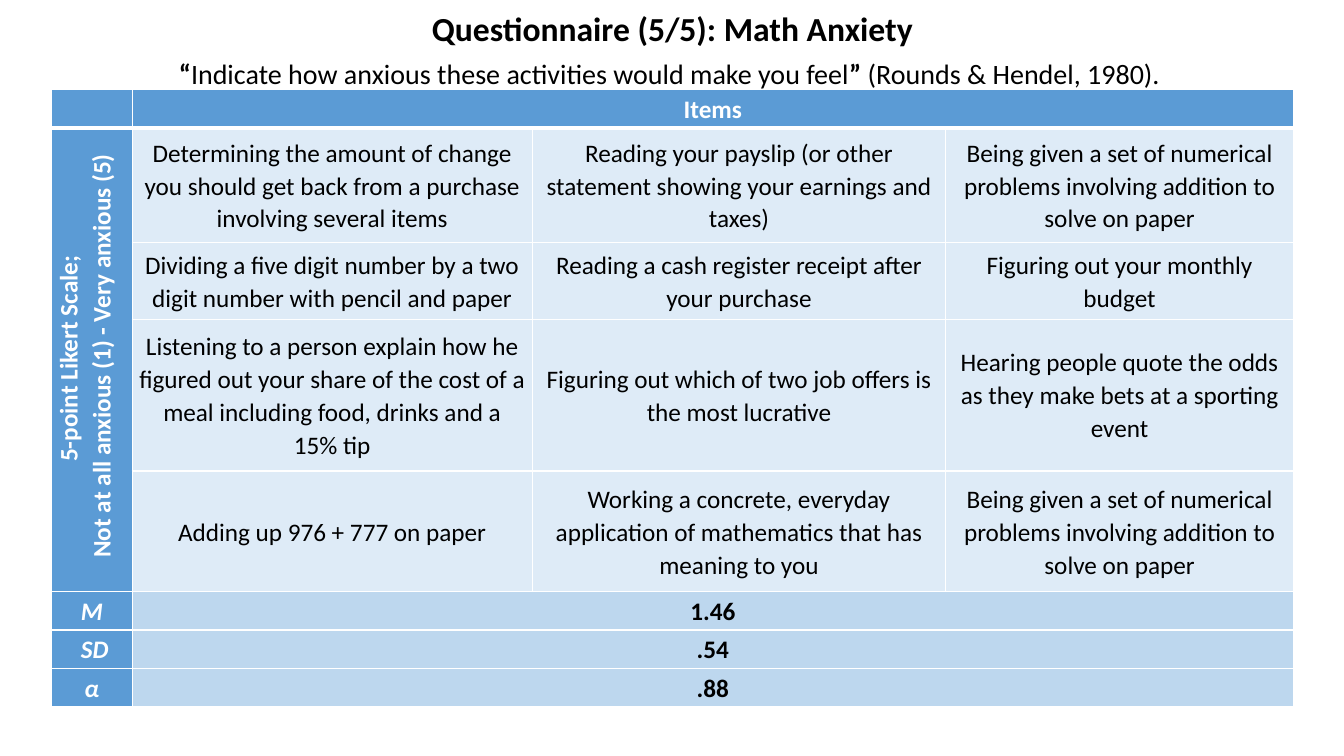
from lxml import etree
from pptx import Presentation
from pptx.dml.color import RGBColor
from pptx.enum.text import MSO_ANCHOR, PP_ALIGN
from pptx.oxml.ns import qn
from pptx.util import Inches, Pt

MIDDLE, TOP = MSO_ANCHOR.MIDDLE, MSO_ANCHOR.TOP
CENTER = PP_ALIGN.CENTER
BLACK, WHITE = "000000", "FFFFFF"
HEADER_BLUE, ITEM_BLUE, RESULT_BLUE = "5B9BD5", "DEEBF7", "BDD7EE"

COLUMN_SHARES = [0.8, 3.97, 4.1, 3.45]
ROW_SHARES = [0.38, 1.14, 0.76, 1.51, 1.2, 0.38, 0.38, 0.38]
SCALE = ["5-point Likert Scale; ", "Not at all anxious (1) - Very anxious (5)"]
ITEMS = [
    ["Determining the amount of change you should get back from a purchase involving several items",
     "Reading your payslip (or other statement showing your earnings and taxes)",
     "Being given a set of numerical problems involving addition to solve on paper"],
    ["Dividing a five digit number by a two digit number with pencil and paper",
     "Reading a cash register receipt after your purchase",
     "Figuring out your monthly budget"],
    ["Listening to a person explain how he figured out your share of the cost of a meal "
     "including food, drinks and a 15% tip",
     "Figuring out which of two job offers is the most lucrative",
     "Hearing people quote the odds as they make bets at a sporting event"],
    ["Adding up 976 + 777 on paper",
     "Working a concrete, everyday application of mathematics that has meaning to you",
     "Being given a set of numerical problems involving addition to solve on paper"],
]
RESULTS = [("M", "1.46"), (" SD", ".54"), ("α", ".88")]


def color(value):
    return RGBColor.from_string(value)


def apply(target, values):
    for name, value in values.items():
        setattr(target, name, value)


class SlideBuilder:
    """Places elements by percentages of the slide's size."""

    font = "Calibri"
    cell_format = {"vertical_anchor": MIDDLE, "margin_left": Inches(0.07),
                   "margin_right": Inches(0.07), "margin_top": 0, "margin_bottom": 0}

    def __init__(self, deck):
        self.deck = deck
        self.slide = deck.slides.add_slide(deck.slide_layouts[6])

    def place(self, left, top, width, height):
        across, down = self.deck.slide_width / 100, self.deck.slide_height / 100
        return int(left * across), int(top * down), int(width * across), int(height * down)

    def fill_para(self, para, spans, size, ink, spacing):
        """Fill a paragraph with (text, font format) spans."""
        apply(para, {"alignment": CENTER, "line_spacing": spacing})
        for text, style in spans:
            span = para.add_run()
            span.text = text
            apply(span.font, {"name": self.font, "size": Pt(size), **style})
            span.font.color.rgb = color(ink)

    def text(self, area, spans, size, anchor):
        frame = self.slide.shapes.add_textbox(*self.place(*area)).text_frame
        apply(frame, {"word_wrap": True, "vertical_anchor": anchor})
        self.fill_para(frame.paragraphs[0], spans, size, BLACK, 0.9)

    def table(self, area, column_shares, row_shares):
        left, top, width, height = self.place(*area)
        table = self.slide.shapes.add_table(
            len(row_shares), len(column_shares), left, top, width, height).table
        apply(table, {"first_row": False, "horz_banding": False})
        for column, share in zip(table.columns, column_shares):
            column.width = int(width * share / sum(column_shares))
        for row, share in zip(table.rows, row_shares):
            row.height = int(height * share / sum(row_shares))
        return table

    def borders(self, cell, widths):
        """Draw white edges, with widths in points by side (L, R, T, B)."""
        properties = cell._tc.get_or_add_tcPr()
        for side, width in widths.items():
            line = etree.SubElement(properties, qn(f"a:ln{side}"), w=str(Pt(width)))
            fill = etree.SubElement(line, qn("a:solidFill"))
            etree.SubElement(fill, qn("a:srgbClr"), val=WHITE)

    def cell(self, cell, lines, ink, style):
        for index, line in enumerate(lines):
            frame = cell.text_frame
            para = frame.add_paragraph() if index else frame.paragraphs[0]
            self.fill_para(para, [(line, style)], 18, ink, 1.07)

    def turn_upward(self, cell):
        cell._tc.get_or_add_tcPr().set("vert", "vert270")
        for para in cell.text_frame.paragraphs:
            para._p.get_or_add_pPr().set("marL", str(Inches(0.08)))


def fill_color(row, column, first_result):
    if row == 0 or column == 0:
        return HEADER_BLUE
    return ITEM_BLUE if row < first_result else RESULT_BLUE


def add_questionnaire(page):
    table = page.table((3.83, 11.87, 92.42, 81.6), COLUMN_SHARES, ROW_SHARES)
    last_column = len(COLUMN_SHARES) - 1
    first_result = len(ITEMS) + 1
    for row in range(len(ROW_SHARES)):
        for column in range(len(COLUMN_SHARES)):
            cell = table.cell(row, column)
            apply(cell, page.cell_format)
            page.borders(cell, {"L": 1, "R": 1, "T": 3 if row == 1 else 1,
                                "B": 3 if row == 0 else 1})
            cell.fill.solid()
            cell.fill.fore_color.rgb = color(fill_color(row, column, first_result))
        if row == 0 or row >= first_result:
            table.cell(row, 1).merge(table.cell(row, last_column))

    page.cell(table.cell(0, 1), ["Items"], WHITE, {"bold": True})
    scale = table.cell(1, 0)
    scale.merge(table.cell(len(ITEMS), 0))
    page.cell(scale, SCALE, WHITE, {"bold": True})
    page.turn_upward(scale)
    for row, items in enumerate(ITEMS, 1):
        for column, item in enumerate(items, 1):
            page.cell(table.cell(row, column), [item], BLACK, {"bold": False})
    for row, (label, value) in enumerate(RESULTS, first_result):
        page.cell(table.cell(row, 0), [label], WHITE, {"bold": True, "italic": True})
        page.cell(table.cell(row, 1), [value], BLACK, {"bold": True})


def main():
    deck = Presentation()
    apply(deck, {"slide_width": Inches(13.33), "slide_height": Inches(7.5)})
    page = SlideBuilder(deck)
    strong, plain = {"bold": True}, {"bold": False}
    page.text((6.9, 0.8, 86.27, 6.4), [("Questionnaire (5/5): Math Anxiety", strong)], 24, MIDDLE)
    page.text((3.83, 7.33, 92.42, 4.67), [
        ("“", strong),
        ("Indicate how anxious these activities would make you feel", plain),
        ("” ", strong),
        ("(Rounds & Hendel, 1980). ", plain),
    ], 20, TOP)
    add_questionnaire(page)
    deck.save("out.pptx")


if __name__ == "__main__":
    main()
